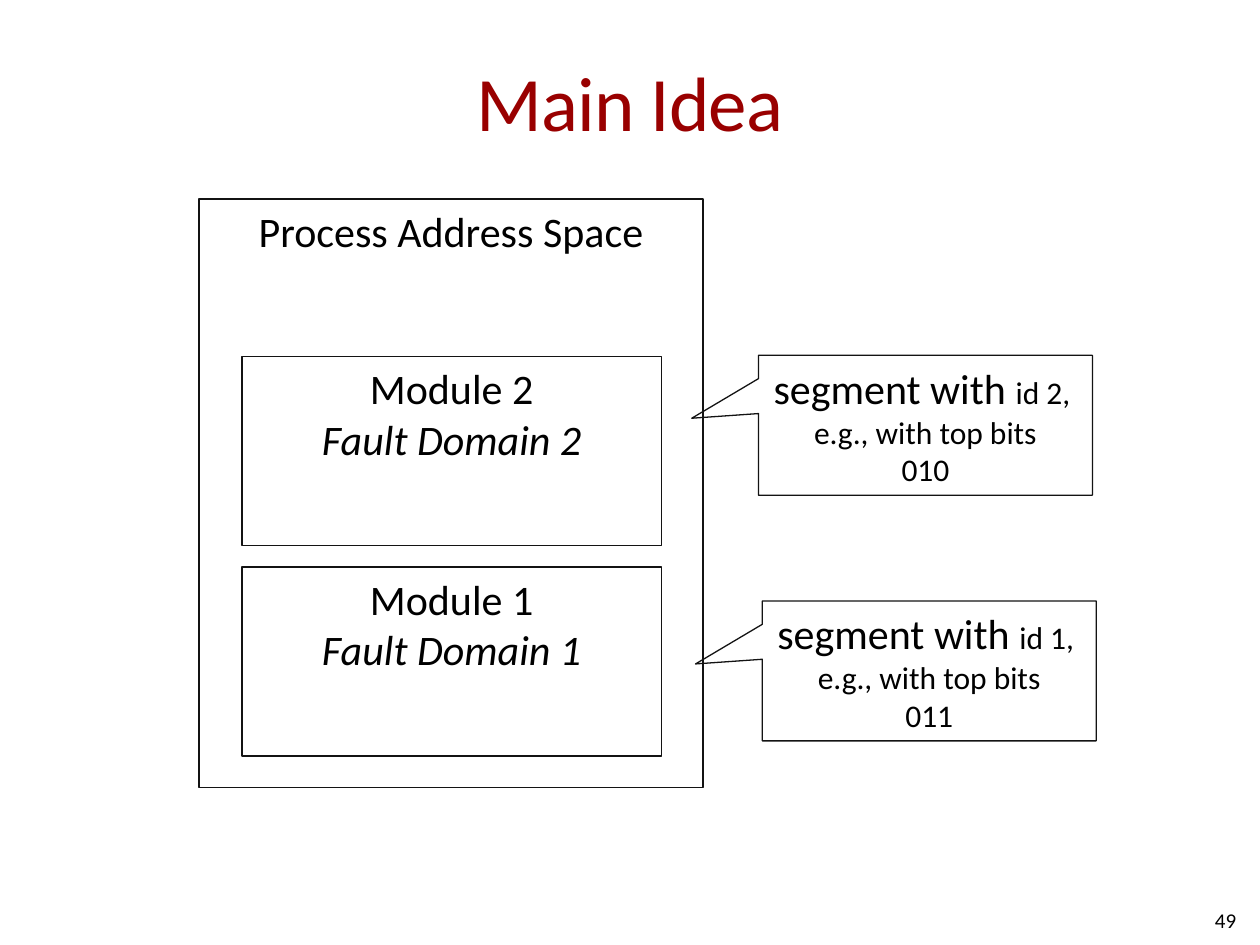
from pptx import Presentation, util as u
from pptx.dml.color import RGBColor
from pptx.enum import shapes, text

FONT, BLACK, RED, LINE = "Calibri", "000000", "990000", "131313"
TITLE, SPACE, PAGE = "Main Idea", "Process Address Space", "49"
MODULES = [(2, 2.83), (1, 4.5)]
SEGMENTS = [(2, "010", 6.02, 2.82), (1, "011", 6.05, 4.77)]
RECT = shapes.MSO_SHAPE.RECTANGLE
CALLOUT = shapes.MSO_SHAPE.RECTANGULAR_CALLOUT
TOP, MIDDLE = text.MSO_ANCHOR.TOP, text.MSO_ANCHOR.MIDDLE
CENTER, RIGHT = text.PP_ALIGN.CENTER, text.PP_ALIGN.RIGHT


def rgb(value):
    return RGBColor.from_string(value)


def write(sp, runs, anchor=TOP, align=CENTER, color=BLACK, wrap=False):
    tf = sp.text_frame
    tf.word_wrap = wrap
    tf.vertical_anchor = anchor
    p = tf.paragraphs[0]
    p.alignment = align
    for content, size, italic in runs:
        for i, line in enumerate(content.split("\n")):
            if i:
                p.add_line_break()
            if line:
                r = p.add_run()
                r.text = line
                r.font.name = FONT
                r.font.size = u.Pt(size)
                r.font.italic = italic
                r.font.color.rgb = rgb(color)
    return tf


def add_box(s, kind, at, runs, anchor=TOP):
    sp = s.shapes.add_shape(kind, *map(u.Inches, at))
    sp.shadow.inherit = False
    sp.fill.background()
    sp.line.color.rgb = rgb(LINE)
    sp.line.width = u.Pt(0.75)
    write(sp, runs, anchor)
    return sp


def add_label(s, at, runs, **style):
    sp = s.shapes.add_textbox(*map(u.Inches, at))
    return write(sp, runs, MIDDLE, wrap=True, **style)


def main():
    prs = Presentation()
    prs.slide_width, prs.slide_height = u.Inches(10), u.Inches(7.5)
    s = prs.slides.add_slide(prs.slide_layouts[6])

    tf = add_label(s, (0.5, 0.17, 9, 1.25), [(TITLE, 44, False)], color=RED)
    tf.margin_left = tf.margin_right = 0
    tf.paragraphs[0].runs[0].font._element.set("spc", "-50")

    add_box(s, RECT, (1.58, 1.58, 4, 4.67), [(SPACE, 24, False)])
    for number, top in MODULES:
        runs = [(f"Module {number}\n", 24, False),
                (f"Fault Domain {number}", 24, True)]
        add_box(s, RECT, (1.92, top, 3.33, 1.5), runs)

    for number, bits, left, top in SEGMENTS:
        runs = [("segment with ", 24, False),
                (f"id {number}, \ne.g., with top bits\n{bits}", 18, False)]
        sp = add_box(s, CALLOUT, (left, top, 2.65, 1.11), runs, MIDDLE)
        sp.adjustments[0], sp.adjustments[1] = -0.7, -0.05

    add_label(s, (7.58, 7.1, 2.33, 0.4), [(PAGE, 12, False)], align=RIGHT)
    prs.save("out.pptx")


if __name__ == "__main__":
    main()
